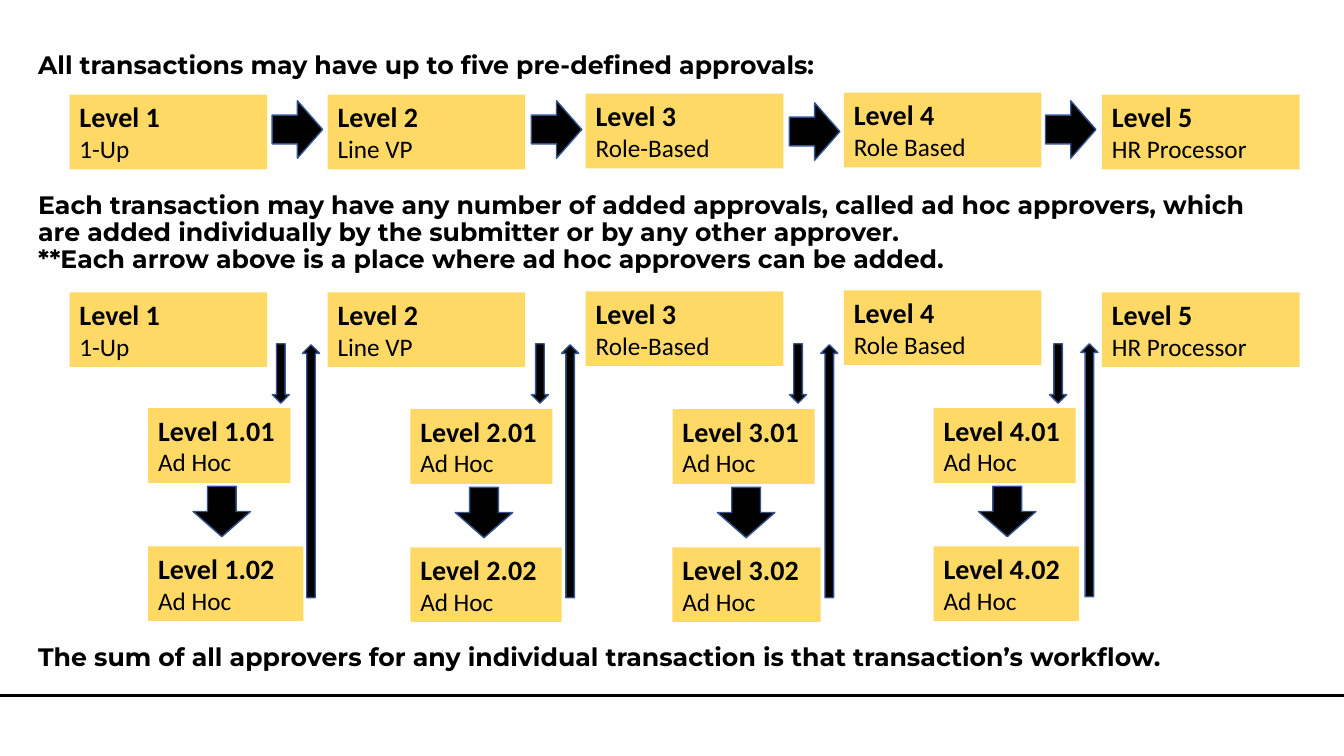
"""Build the approval workflow slide."""
from dataclasses import dataclass

from lxml.etree import SubElement
from pptx import Presentation
from pptx.dml.color import RGBColor
from pptx.enum.shapes import MSO_CONNECTOR as Connector, MSO_SHAPE as Shape
from pptx.enum.text import MSO_ANCHOR as Anchor, MSO_AUTO_SIZE as AutoSize, PP_ALIGN as Align
from pptx.oxml.ns import qn
from pptx.slide import Slide
from pptx.text.text import _Paragraph as Paragraph
from pptx.util import Inches, Pt


@dataclass(frozen=True)
class Theme:
    """Colours, fonts and type sizes of the slide."""
    black: RGBColor = RGBColor(0, 0, 0)
    gold: RGBColor = RGBColor(0xFF, 0xD9, 0x66)
    outline: RGBColor = RGBColor(0x32, 0x54, 0x91)
    statement_font: str = "Montserrat"
    level_font: str = "Calibri"
    title_size: Pt = Pt(20)
    body_size: Pt = Pt(18)


@dataclass(frozen=True)
class Level:
    """A pre-defined approval level."""
    approver: str
    lift: float = 0


@dataclass(frozen=True)
class Detour:
    """The ad hoc approvals and arrows that follow a level."""
    left: float
    top: float
    second_width: float
    next_left: float
    next_top: float
    down_left: float
    up_left: float
    up_top: float = 4.59


@dataclass(frozen=True)
class Statement:
    """A bold line of explanation."""
    top: float
    text: str


THEME = Theme()
BOX_HEIGHT = 0.74
LEVEL_LEFT, LEVEL_STEP, LEVEL_WIDTH = 0.69, 2.56, 1.96
LEVEL_ROWS = (0.94, 2.9)
ADHOC_WIDTH, ADHOC_DROP = 1.41, 1.37
ARROW_WIDTH, ARROW_HEIGHT = 0.5, 0.57
LEVELS = (
    Level("1-Up"),
    Level("Line VP"),
    Level("Role-Based", 0.01),
    Level("Role Based", 0.02),
    Level("HR Processor"),
)
DETOURS = (
    Detour(1.47, 4.05, 1.54, 2.7, 1, 2.49, 1.83),
    Detour(4.07, 4.06, 1.5, 5.27, 1, 5.06, 4.4),
    Detour(6.67, 4.06, 1.47, 7.83, 1.02, 7.62, 6.97),
    Detour(9.26, 4.05, 1.44, 10.37, 1, 10.2, 9.55, 4.58),
)
STATEMENTS = (
    Statement(0.37, "All transactions may have up to five pre-defined approvals:"),
    Statement(2.03, "Each transaction may have any number of added approvals, called ad hoc approvers, "
                    "which are added individually by the submitter or by any other approver.\v"
                    "**Each arrow above is a place where ad hoc approvers can be added."),
    Statement(6.25, "The sum of all approvers for any individual transaction is that "
                    "transaction’s workflow."),
)


def write(para: Paragraph, text: str, name: str, size: Pt, bold: bool) -> None:
    """Fill a paragraph with text in one format."""
    para.text = text
    para.alignment = Align.LEFT
    for span in para.runs:
        for key, value in {"name": name, "size": size, "bold": bold}.items():
            setattr(span.font, key, value)
        span.font.color.rgb = THEME.black


def add_statement(page: Slide, statement: Statement) -> None:
    """Add a full-width statement."""
    box = page.shapes.add_textbox(Inches(0.28), Inches(statement.top), Inches(12.52), Inches(0.57))
    frame = box.text_frame
    for key, value in {"word_wrap": True, "vertical_anchor": Anchor.MIDDLE}.items():
        setattr(frame, key, value)
    para = frame.paragraphs[0]
    write(para, statement.text, THEME.statement_font, THEME.body_size, True)
    para.line_spacing = 0.9


def add_box(page: Slide, left: float, top: float, width: float, title: str, approver: str) -> None:
    """Add a gold box with a level and its approver."""
    box = page.shapes.add_shape(Shape.RECTANGLE, Inches(left), Inches(top), Inches(width),
                                Inches(BOX_HEIGHT))
    box.shadow.inherit = False
    box.fill.solid()
    box.fill.fore_color.rgb = THEME.gold
    box.line.fill.background()
    frame = box.text_frame
    layout = {"word_wrap": True, "vertical_anchor": Anchor.TOP,
              "auto_size": AutoSize.SHAPE_TO_FIT_TEXT}
    for key, value in layout.items():
        setattr(frame, key, value)
    write(frame.paragraphs[0], title, THEME.level_font, THEME.title_size, True)
    write(frame.add_paragraph(), approver, THEME.level_font, THEME.body_size, False)


def add_arrow(page: Slide, left: float, top: float, width: float = ARROW_WIDTH,
              height: float = ARROW_HEIGHT, rotation: float = 0) -> None:
    """Add a black block arrow, turned clockwise by the rotation."""
    arrow = page.shapes.add_shape(Shape.RIGHT_ARROW, Inches(left), Inches(top), Inches(width),
                                  Inches(height))
    arrow.shadow.inherit = False
    arrow.rotation = rotation
    arrow.fill.solid()
    arrow.fill.fore_color.rgb = THEME.black
    arrow.line.color.rgb = THEME.outline
    arrow.line.width = Pt(1)


def add_levels(page: Slide, top: float) -> None:
    """Add one row of the five levels."""
    for index, level in enumerate(LEVELS):
        add_box(page, LEVEL_LEFT + index * LEVEL_STEP, top - level.lift, LEVEL_WIDTH,
                f"Level {index + 1}", level.approver)


def add_detour(page: Slide, number: int, detour: Detour) -> None:
    """Add the arrows and ad hoc boxes after a level."""
    add_arrow(page, detour.next_left, detour.next_top)
    for step, width in enumerate((ADHOC_WIDTH, detour.second_width)):
        add_box(page, detour.left, detour.top + step * ADHOC_DROP, width,
                f"Level {number}.0{step + 1}", "Ad Hoc")
    add_arrow(page, detour.left + 0.48, detour.top + BOX_HEIGHT, rotation=90)
    add_arrow(page, detour.down_left, 3.62, 0.59, 0.17, 90)
    add_arrow(page, detour.up_left, detour.up_top, 2.51, 0.17, 270)


def add_footer_rule(page: Slide) -> None:
    """Add the rule across the bottom."""
    rule = page.shapes.add_connector(Connector.STRAIGHT, Inches(0), Inches(6.9), Inches(13.33),
                                     Inches(6.9))
    rule.line.color.rgb = THEME.black
    rule.line.width = Pt(2)
    SubElement(rule._element.spPr, qn("a:effectLst"))


def main() -> None:
    """Build and save the deck."""
    deck = Presentation()
    deck.slide_width, deck.slide_height = Inches(13.33), Inches(7.5)
    page = deck.slides.add_slide(deck.slide_layouts[6])
    add_footer_rule(page)
    for statement in STATEMENTS:
        add_statement(page, statement)
    for top in LEVEL_ROWS:
        add_levels(page, top)
    for number, detour in enumerate(DETOURS, start=1):
        add_detour(page, number, detour)
    deck.save("out.pptx")


if __name__ == "__main__":
    main()
